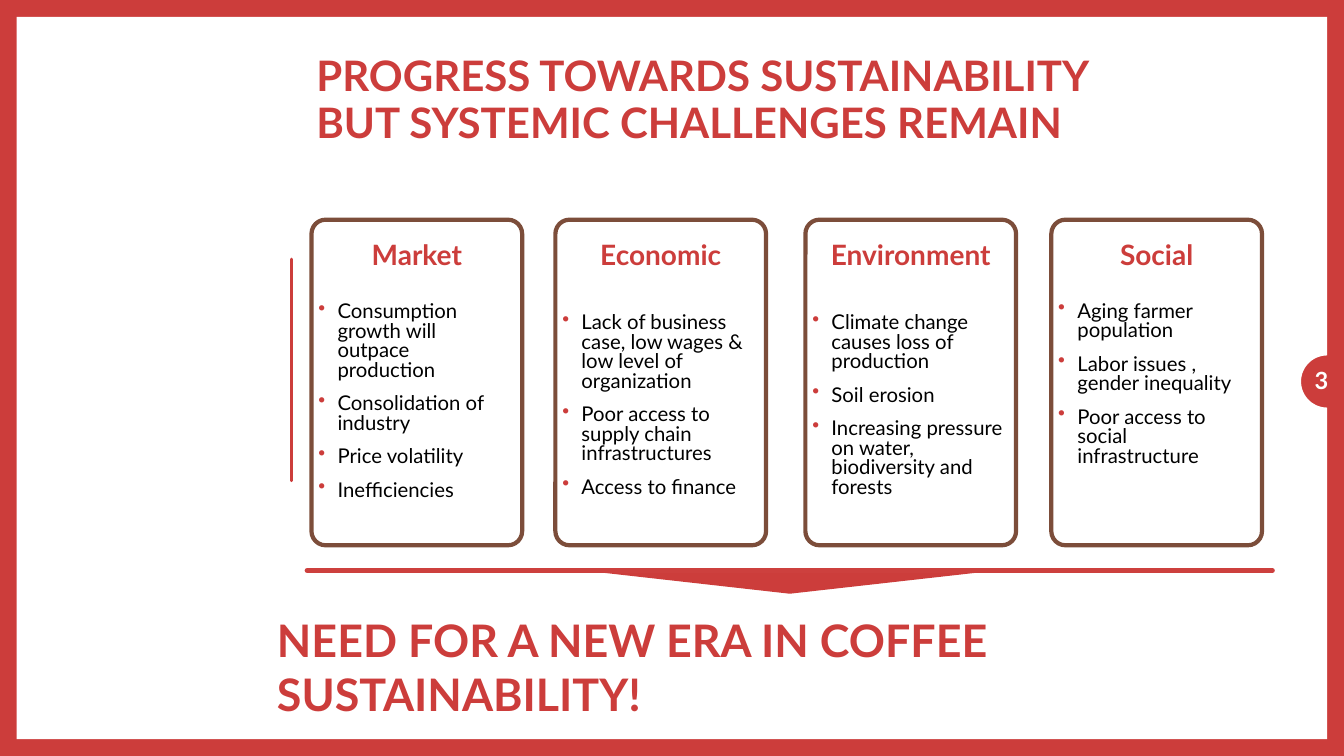
import math
import pptx
import pptx.util
import pptx.dml.color
import pptx.enum.shapes
import pptx.enum.text
import pptx.oxml
import pptx.oxml.ns

COLS, ROWS = 80, 45
CELL = pptx.util.Inches(1 / 6)
RED, BROWN, WHITE, BLACK = "CC3D3B", "7C4D3A", "FFFFFF", "000000"
FONT = "Lato"
KIND = pptx.enum.shapes.MSO_SHAPE
ALIGN = pptx.enum.text.PP_ALIGN
ANCHOR = pptx.enum.text.MSO_ANCHOR

CARD_TOP, CARD_WIDE, CARD_HIGH = 13.08, 12.54, 19.38
CARDS = [
    (18.54, 1.32, "Market", ["Consumption growth will outpace production",
                             "Consolidation of industry", "Price volatility",
                             "Inefficiencies"]),
    (33.06, 1.56, "Economic", ["Lack of business case, low wages & low level of organization",
                               "Poor access to supply chain infrastructures",
                               "Access to finance"]),
    (47.94, 1.56, "Environment", ["Climate change causes loss of production",
                                  "Soil erosion",
                                  "Increasing pressure on water, biodiversity and forests"]),
    (62.58, 0.3, "Social", ["Aging farmer population",
                            "Labor issues , gender inequality",
                            "Poor access to social infrastructure"]),
]


def grid(*cells):
    """Turn grid cells into slide lengths."""
    return [round(cell * CELL) for cell in cells]


def tint(code):
    """Turn a hex string into a colour."""
    return pptx.dml.color.RGBColor.from_string(code)


def fill(shape, code):
    """Fill a shape flat, with no outline or shadow."""
    shape.shadow.inherit = False
    shape.fill.solid()
    shape.fill.fore_color.rgb = tint(code)
    shape.line.fill.background()


def text_box(slide, box, anchor=ANCHOR.TOP, inset=(0.1, 0.05, 0.1, 0.05)):
    """Add an empty wrapping text box and return its frame."""
    frame = slide.shapes.add_textbox(*grid(*box)).text_frame
    frame.word_wrap = True
    frame.vertical_anchor = anchor
    (frame.margin_left, frame.margin_top,
     frame.margin_right, frame.margin_bottom) = map(pptx.util.Inches, inset)
    return frame


def add_run(para, text, size, code, bold=True):
    """Add one styled run to a paragraph."""
    run = para.add_run()
    run.text = text
    run.font.name = FONT
    run.font.size = pptx.util.Pt(size)
    run.font.bold = bold
    run.font.color.rgb = tint(code)


def bullet(para):
    """Give a paragraph a red hanging bullet."""
    props = para._p.get_or_add_pPr()
    indent = pptx.util.Inches(0.19)
    props.set("marL", str(indent))
    props.set("indent", str(-indent))
    space = pptx.oxml.ns.nsdecls("a")
    for part in (f'<a:buClr {space}><a:srgbClr val="{RED}"/></a:buClr>',
                 f'<a:buChar {space} char="•"/>'):
        props.append(pptx.oxml.parse_xml(part))


def rule(slide, ends, width, code):
    """Draw a straight line with round ends."""
    line = slide.shapes.add_connector(
        pptx.enum.shapes.MSO_CONNECTOR.STRAIGHT, *grid(*ends))
    line.line.width = pptx.util.Pt(width)
    line.line.color.rgb = tint(code)
    props = line._element.spPr
    props.find(pptx.oxml.ns.qn("a:ln")).set("cap", "rnd")
    props.append(pptx.oxml.parse_xml(f'<a:effectLst {pptx.oxml.ns.nsdecls("a")}/>'))


def panel(slide, box):
    """Draw the white page with its round notch and the slide number."""
    left, top, wide, high = box
    right, low = left + wide, top + high
    mid, radius, steps = 22.71, 1.55, 40
    notch = [(right - radius * math.sin(math.pi * step / steps),
              mid - radius * math.cos(math.pi * step / steps))
             for step in range(steps + 1)]
    edge = [(right, top), *notch, (right, low), (left, low)]
    path = slide.shapes.build_freeform(*grid(left, top), scale=1.0)
    path.add_line_segments([grid(*point) for point in edge], close=True)
    fill(path.convert_to_shape(), WHITE)
    frame = text_box(slide, (COLS - 2.66, mid - 1.17, 2.64, 2.4), ANCHOR.MIDDLE, (0, 0, 0, 0))
    para = frame.paragraphs[0]
    para.alignment = ALIGN.CENTER
    para.line_spacing = pptx.util.Pt(16.9)
    add_run(para, "3", 16.9, WHITE)


def title(slide, box):
    """Write the two-line title at the foot of its box."""
    para = text_box(slide, box, ANCHOR.BOTTOM, (0.1, 0.05, 0, 0)).paragraphs[0]
    para.line_spacing = pptx.util.Pt(33.9)
    add_run(para, "PROGRESS TOWARDS SUSTAINABILITY ", 30, RED)
    para.add_line_break()
    add_run(para, "BUT SYSTEMIC CHALLENGES REMAIN", 30, RED)


def card(slide, box, drop, head, points):
    """Draw one outlined card with its heading and bullets."""
    left, top, wide, high = box
    frame = text_box(slide, (left - 0.18, top + drop, wide, 19.08), ANCHOR.MIDDLE)
    for rank, point in enumerate(points):
        para = frame.add_paragraph() if rank else frame.paragraphs[0]
        para.line_spacing = 0.8
        para.space_after = pptx.util.Pt(10)
        bullet(para)
        add_run(para, point, 14.5, BLACK, False)
    para = text_box(slide, (left, top + 0.66, wide, 3.18), ANCHOR.MIDDLE).paragraphs[0]
    para.alignment = ALIGN.CENTER
    para.line_spacing = 0.8
    add_run(para, head, 20, RED)
    shape = slide.shapes.add_shape(KIND.ROUNDED_RECTANGLE, *grid(*box))
    shape.adjustments[0] = 0.067
    shape.shadow.inherit = False
    shape.fill.background()
    shape.line.width = pptx.util.Pt(3)
    shape.line.color.rgb = tint(BROWN)


def arrow(slide, box):
    """Draw the wide line with a flat triangle pointing down."""
    left, top, wide, high = box
    span = 24.54
    shape = slide.shapes.add_shape(
        KIND.ISOSCELES_TRIANGLE, *grid(left + (wide - span) / 2, top, span, high))
    shape.rotation = 180
    fill(shape, RED)
    rule(slide, (left, top, left + wide, top), 4, "CD403E")


def closing(slide, box):
    """Write the closing call below the arrow."""
    para = text_box(slide, box).paragraphs[0]
    add_run(para, "NEED FOR A NEW ERA IN COFFEE SUSTAINABILITY!", 32, RED)


def main():
    """Build and save the slide."""
    deck = pptx.Presentation()
    deck.slide_width, deck.slide_height = grid(COLS, ROWS)
    slide = deck.slides.add_slide(deck.slide_layouts[6])
    slide.background.fill.solid()
    slide.background.fill.fore_color.rgb = tint(RED)
    panel(slide, (1, 1, COLS - 2, ROWS - 2))
    rule(slide, (17.34, 15.42, 17.34, 28.62), 2, RED)
    title(slide, (18.24, 3.12, 55.14, 5.64))
    for left, drop, head, points in CARDS:
        card(slide, (left, CARD_TOP, CARD_WIDE, CARD_HIGH), drop, head, points)
    arrow(slide, (18.3, 33.96, 57.42, 1.38))
    closing(slide, (15.9, 36.18, 64.2, 3.84))
    deck.save("out.pptx")


if __name__ == "__main__":
    main()
